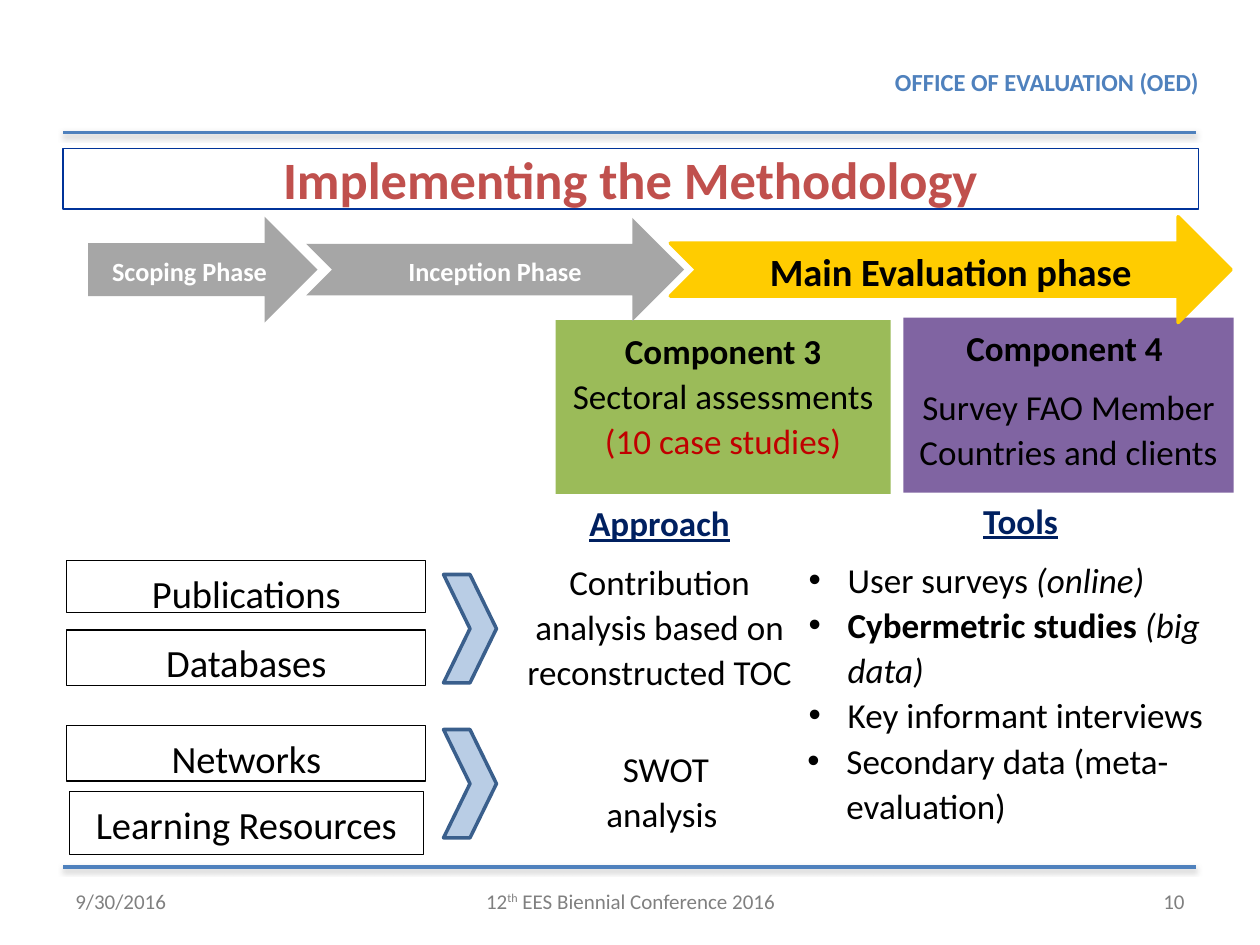
from lxml import etree
from pptx import Presentation
from pptx.dml.color import RGBColor
from pptx.enum.shapes import MSO_CONNECTOR, MSO_SHAPE
from pptx.enum.text import MSO_ANCHOR, MSO_AUTO_SIZE, PP_ALIGN
from pptx.oxml.ns import qn
from pptx.util import Inches, Pt

LEFT, CENTER, RIGHT = PP_ALIGN.LEFT, PP_ALIGN.CENTER, PP_ALIGN.RIGHT
TOP, MIDDLE = MSO_ANCHOR.TOP, MSO_ANCHOR.MIDDLE
RECTANGLE, CHEVRON = MSO_SHAPE.RECTANGLE, MSO_SHAPE.CHEVRON
RIGHT_ARROW, NOTCHED_ARROW = MSO_SHAPE.RIGHT_ARROW, MSO_SHAPE.NOTCHED_RIGHT_ARROW

FONT = "Calibri"
BLUE, NAVY, BLACK, GREY = "4F81BD", "002060", "000000", "808080"
SILVER, GOLD = "A6A6A6", "FFCC00"
BODY = {"spacing": 1.07, "after": 8}
HEADING = {"bold": True, "underline": True, "color": NAVY}


def rgb(color):
    return RGBColor.from_string(color)


def add_bullet(paragraph):
    properties = paragraph._p.get_or_add_pPr()
    properties.set("marL", str(Inches(0.31)))
    properties.set("indent", str(-Inches(0.31)))
    etree.SubElement(properties, qn("a:buFont")).set("typeface", "Arial")
    etree.SubElement(properties, qn("a:buChar")).set("char", "•")


def add_run(paragraph, text, size, color=BLACK, bold=False, italic=False,
            underline=False, superscript=False):
    run = paragraph.add_run()
    run.text = text
    font = run.font
    font.name, font.size, font.color.rgb = FONT, Pt(size), rgb(color)
    font.bold, font.italic, font.underline = bold, italic, underline
    if superscript:
        run._r.get_or_add_rPr().set("baseline", "30000")


def write_paragraph(paragraph, runs, align=CENTER, spacing=1.0, after=0,
                    bullet=False, **run_format):
    """Runs are one string, or a list of (text, format) pairs."""
    paragraph.alignment = LEFT if bullet else align
    paragraph.line_spacing = spacing
    paragraph.space_before = Pt(0)
    paragraph.space_after = Pt(after)
    if bullet:
        add_bullet(paragraph)
    for text, extra in [(runs, {})] if isinstance(runs, str) else runs:
        add_run(paragraph, text, **{**run_format, **extra})


def write(shape, paragraphs, anchor=TOP, **text_format):
    """Paragraphs are one string, or a list of (runs, format) pairs."""
    frame = shape.text_frame
    frame.word_wrap = True
    frame.auto_size = MSO_AUTO_SIZE.NONE
    frame.vertical_anchor = anchor
    if isinstance(paragraphs, str):
        paragraphs = [(paragraphs, {})]
    for index, (runs, extra) in enumerate(paragraphs):
        paragraph = frame.add_paragraph() if index else frame.paragraphs[0]
        write_paragraph(paragraph, runs, **{**text_format, **extra})


def add_text(slide, box, paragraphs, **text_format):
    write(slide.shapes.add_textbox(*map(Inches, box)), paragraphs, **text_format)


def add_block(slide, kind, box, fill=None, line=None, line_width=2):
    shape = slide.shapes.add_shape(kind, *map(Inches, box))
    shape.shadow.inherit = False
    if fill:
        shape.fill.solid()
        shape.fill.fore_color.rgb = rgb(fill)
    else:
        shape.fill.background()
    if line:
        shape.line.color.rgb = rgb(line)
        shape.line.width = Pt(line_width)
    else:
        shape.line.fill.background()
    return shape


def add_rule(slide, top):
    rule = slide.shapes.add_connector(
        MSO_CONNECTOR.STRAIGHT, Inches(0.5), Inches(top), Inches(9.49), Inches(top))
    rule.line.color.rgb = rgb(BLUE)
    rule.line.width = Pt(2)
    effects = etree.SubElement(rule._element.spPr, qn("a:effectLst"))
    shadow = etree.SubElement(
        effects, qn("a:outerShdw"), blurRad=str(Pt(3.1)), dist=str(Pt(1.6)),
        dir="5400000", rotWithShape="0")
    color = etree.SubElement(shadow, qn("a:srgbClr"), val=GREY)
    etree.SubElement(color, qn("a:alpha"), val="38000")


def add_title(slide):
    title = slide.shapes.title
    title.left, title.top, title.width, title.height = map(Inches, (0.5, 1.18, 9.01, 0.48))
    title.line.color.rgb = rgb("003399")
    title.line.width = Pt(0.75)
    write(title, "Implementing the Methodology", anchor=MIDDLE, size=30,
          color="C0504D", bold=True)


def add_frame(slide):
    # Header, rules and footer
    for top in (1.05, 6.88):
        add_rule(slide, top)
    add_text(slide, (6.83, 0.52, 2.96, 0.25), "OFFICE OF EVALUATION (OED)",
             anchor=MIDDLE, size=14, color=BLUE, bold=True)
    conference = [([("12", {}), ("th", {"superscript": True}),
                    (" EES Biennial Conference 2016", {})], {})]
    for left, width, text, align, color in (
            (0.5, 2.33, "9/30/2016", LEFT, GREY),
            (3.42, 3.17, conference, CENTER, GREY),
            (7.17, 2.33, "10", RIGHT, "7F7F7F")):
        add_text(slide, (left, 6.95, width, 0.4), text, anchor=MIDDLE,
                 align=align, size=12, color=color)


def add_components(slide):
    component = add_block(slide, RECTANGLE, (4.41, 2.54, 2.66, 1.38), "9BBB59")
    write(component, [([("Component 3 ", {"bold": True}), ("Sectoral assessments ", {}),
                        ("(10 case studies)", {"color": "C00000"})], {})], size=20, **BODY)
    component = add_block(slide, RECTANGLE, (7.17, 2.52, 2.62, 1.39), "8064A2")
    write(component, [("Component 4 ", {"bold": True}),
                      ("Survey FAO Member Countries and clients", {})], size=20, **BODY)


def add_sources(slide):
    for text, box in (("Publications", (0.53, 4.45, 2.85, 0.41)),
                      ("Databases", (0.53, 5, 2.85, 0.44)),
                      ("Networks", (0.53, 5.76, 2.85, 0.44)),
                      ("Learning Resources", (0.55, 6.28, 2.81, 0.5))):
        source = add_block(slide, RECTANGLE, box, line=BLACK, line_width=0.75)
        write(source, text, size=22, **BODY)
    for top in (4.56, 5.79):
        add_block(slide, CHEVRON, (3.52, top, 0.42, 0.86), "B9CDE5", "3A5F8C")


def add_approach_and_tools(slide):
    add_text(slide, (4.07, 3.91, 2.33, 1.97),
             [("Approach", HEADING),
              ("Contribution analysis based on reconstructed TOC ", {})], size=20, **BODY)
    add_text(slide, (4.41, 5.88, 1.75, 0.77), "SWOT analysis ", anchor=MIDDLE,
             size=20, **BODY)
    item = {"bullet": True, "after": 0}
    add_text(slide, (6.32, 3.89, 3.56, 1.98),
             [("Tools", HEADING),
              ([("User surveys ", {}), ("(online)", {"italic": True})], item),
              ([("Cybermetric studies ", {"bold": True}),
                ("(big data)", {"italic": True})], item),
              ("Key informant interviews", item)], size=20, **BODY)
    add_text(slide, (6.31, 5.8, 3.39, 1.08),
             [("Secondary data (meta-evaluation)", item)], size=20, **BODY)


def add_phases(slide):
    for text, kind, box, fill, line, size, color in (
            ("Inception Phase", NOTCHED_ARROW, (2.43, 1.73, 3, 0.82), SILVER, None, 15, "FFFFFF"),
            ("Main Evaluation phase", NOTCHED_ARROW, (5.32, 1.72, 4.45, 0.84), GOLD, GOLD, 22, BLACK),
            ("Scoping Phase", RIGHT_ARROW, (0.7, 1.72, 1.82, 0.84), SILVER, None, 15, "FFFFFF")):
        phase = add_block(slide, kind, box, fill, line)
        write(phase, text, anchor=MIDDLE, size=size, color=color, bold=True, **BODY)


def main():
    presentation = Presentation()
    presentation.slide_width, presentation.slide_height = Inches(10), Inches(7.5)
    slide = presentation.slides.add_slide(presentation.slide_layouts[5])
    add_title(slide)
    add_frame(slide)
    add_components(slide)
    add_sources(slide)
    add_approach_and_tools(slide)
    add_phases(slide)
    presentation.save("out.pptx")


if __name__ == "__main__":
    main()
